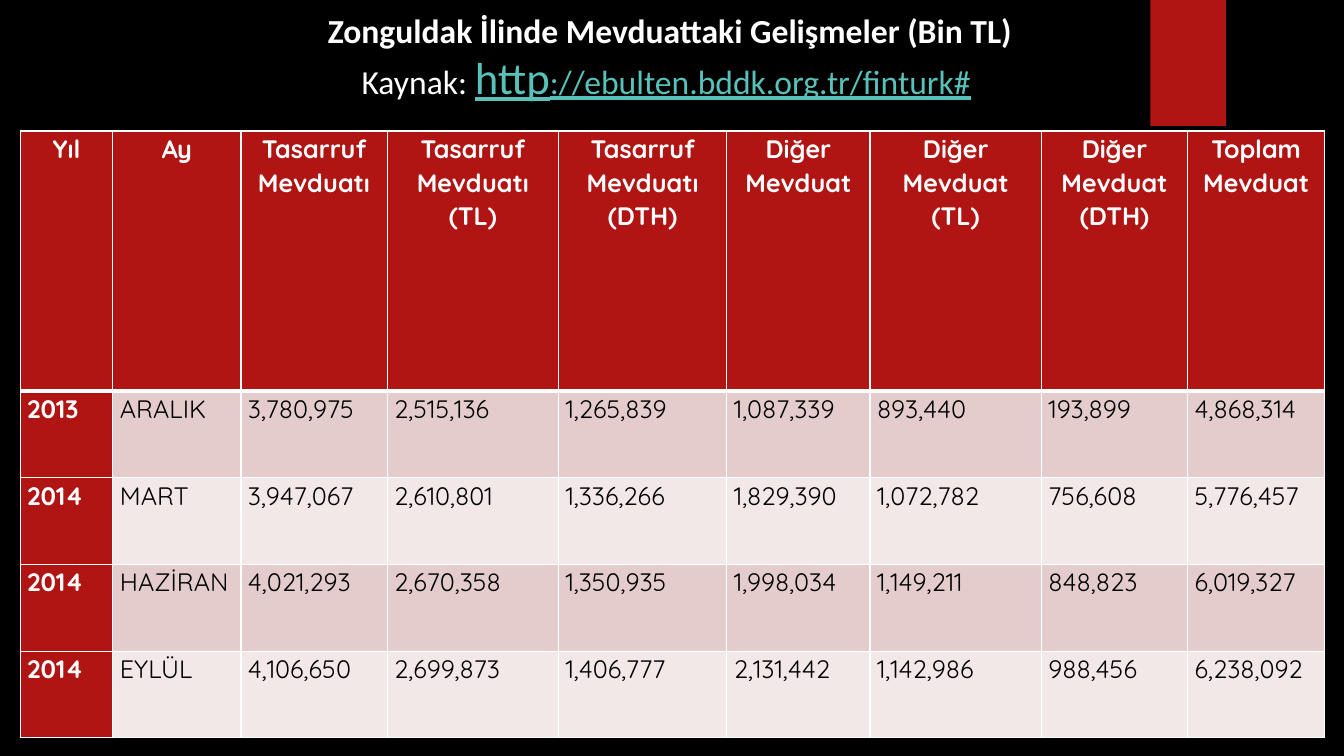
from dataclasses import dataclass

from lxml import etree
from pptx import Presentation
from pptx import util as u
from pptx.dml.color import RGBColor
from pptx.enum import shapes, text
from pptx.oxml import ns


@dataclass(frozen=True)
class Theme:
    black: str = "000000"
    white: str = "FFFFFF"
    red: str = "B01513"
    link: str = "58C1BA"
    bands: tuple[str, str] = ("E4CCCC", "F2E8E7")
    title_font: str = "Calibri"
    table_font: str = "Quicksand"
    title_size: int = 24
    link_size: int = 32
    table_size: int = 18


@dataclass(frozen=True)
class Span:
    wording: str
    color: str
    size: int
    font: str
    bold: bool = False
    underline: bool = False


@dataclass(frozen=True)
class CellStyle:
    fill: str
    color: str
    bold: bool
    align: text.PP_ALIGN = text.PP_ALIGN.LEFT
    top: int = 1
    bottom: int = 1


THEME = Theme()

# Table data
COLUMN_WIDTHS = (0.92, 1.27, 1.45, 1.7, 1.67, 1.42, 1.7, 1.45, 1.36)
HEADER_HEIGHT, ROW_HEIGHT = 2.58, 0.86
DEPOSITS = (
    ("Yıl", "Ay", "Tasarruf Mevduatı", "Tasarruf Mevduatı (TL)", "Tasarruf Mevduatı (DTH)",
     "Diğer Mevduat", "Diğer Mevduat (TL)", "Diğer Mevduat (DTH)", "Toplam Mevduat"),
    ("2013", "ARALIK", "3,780,975", "2,515,136", "1,265,839",
     "1,087,339", "893,440", "193,899", "4,868,314"),
    ("2014", "MART", "3,947,067", "2,610,801", "1,336,266",
     "1,829,390", "1,072,782", "756,608", "5,776,457"),
    ("2014", "HAZİRAN", "4,021,293", "2,670,358", "1,350,935",
     "1,998,034", "1,149,211", "848,823", "6,019,327"),
    ("2014", "EYLÜL", "4,106,650", "2,699,873", "1,406,777",
     "2,131,442", "1,142,986", "988,456", "6,238,092"),
)

# Title lines
TITLE_LINES = (
    (Span("Zonguldak İlinde Mevduattaki Gelişmeler (Bin TL)",
          THEME.white, THEME.title_size, THEME.title_font, bold=True),),
    (Span("Kaynak: ", THEME.white, THEME.title_size, THEME.title_font),
     Span("http", THEME.link, THEME.link_size, THEME.title_font, underline=True),
     Span("://ebulten.bddk.org.tr/finturk#",
          THEME.link, THEME.title_size, THEME.title_font, underline=True),
     Span(" ", THEME.white, THEME.title_size, THEME.title_font)),
)


def apply(target, values: dict) -> None:
    for name, value in values.items():
        setattr(target, name, value)


def add_span(para, span: Span) -> None:
    run = para.add_run()
    run.text = span.wording
    apply(run.font, {"size": u.Pt(span.size), "name": span.font,
                     "bold": span.bold, "underline": span.underline})
    run.font.color.rgb = RGBColor.from_string(span.color)


def fill_title(title) -> None:
    apply(title, {"left": u.Inches(1.82), "top": u.Inches(0.04),
                  "width": u.Inches(9.65), "height": u.Inches(1.04)})
    frame = title.text_frame
    apply(frame, {"word_wrap": True, "vertical_anchor": text.MSO_ANCHOR.MIDDLE,
                  "auto_size": text.MSO_AUTO_SIZE.SHAPE_TO_FIT_TEXT})
    for index, spans in enumerate(TITLE_LINES):
        para = frame.add_paragraph() if index else frame.paragraphs[0]
        apply(para, {"alignment": text.PP_ALIGN.CENTER, "line_spacing": 1.0,
                     "space_before": u.Pt(0)})
        for span in spans:
            add_span(para, span)


def style_for(row: int, column: int) -> CellStyle:
    if row == 0:
        return CellStyle(THEME.red, THEME.white, True, text.PP_ALIGN.CENTER, bottom=3)
    top = 3 if row == 1 else 1
    if column == 0:
        return CellStyle(THEME.red, THEME.white, True, top=top)
    return CellStyle(THEME.bands[(row - 1) % 2], THEME.black, False, top=top)


def add_borders(cell, style: CellStyle) -> None:
    properties = cell._tc.get_or_add_tcPr()
    widths = {"a:lnL": 1, "a:lnR": 1, "a:lnT": style.top, "a:lnB": style.bottom}
    for tag, width in widths.items():
        line = etree.SubElement(properties, ns.qn(tag), w=str(u.Pt(width)))
        solid = etree.SubElement(line, ns.qn("a:solidFill"))
        etree.SubElement(solid, ns.qn("a:srgbClr"), val=THEME.white)


def fill_cell(cell, wording: str, style: CellStyle) -> None:
    apply(cell, {"margin_left": u.Inches(0.07), "margin_right": u.Inches(0.07),
                 "margin_top": 0, "margin_bottom": 0})
    add_borders(cell, style)
    cell.fill.solid()
    cell.fill.fore_color.rgb = RGBColor.from_string(style.fill)
    para = cell.text_frame.paragraphs[0]
    apply(para, {"alignment": style.align, "line_spacing": 1.07})
    add_span(para, Span(wording, style.color, THEME.table_size, THEME.table_font, style.bold))


def add_deposit_table(page) -> None:
    heights = [HEADER_HEIGHT] + [ROW_HEIGHT] * (len(DEPOSITS) - 1)
    table = page.shapes.add_table(
        len(DEPOSITS), len(COLUMN_WIDTHS), u.Inches(0.2), u.Inches(1.3),
        u.Inches(sum(COLUMN_WIDTHS)), u.Inches(sum(heights))).table
    for column, width in zip(table.columns, COLUMN_WIDTHS):
        column.width = u.Inches(width)
    for row, height in zip(table.rows, heights):
        row.height = u.Inches(height)
    for row, record in enumerate(DEPOSITS):
        for column, wording in enumerate(record):
            fill_cell(table.cell(row, column), wording, style_for(row, column))


def add_red_tab(page) -> None:
    tab = page.shapes.add_shape(shapes.MSO_SHAPE.RECTANGLE, u.Inches(11.41), 0,
                                u.Inches(0.75), u.Inches(1.25))
    tab.shadow.inherit = False
    tab.fill.solid()
    tab.fill.fore_color.rgb = RGBColor.from_string(THEME.red)
    tab.line.fill.background()


def main() -> None:
    deck = Presentation()
    apply(deck, {"slide_width": u.Inches(13.33), "slide_height": u.Inches(7.5)})
    page = deck.slides.add_slide(deck.slide_layouts.get_by_name("Title Only"))

    # Background
    page.background.fill.solid()
    page.background.fill.fore_color.rgb = RGBColor.from_string(THEME.black)

    # Content
    add_red_tab(page)
    add_deposit_table(page)
    fill_title(page.shapes.title)
    deck.save("out.pptx")


if __name__ == "__main__":
    main()
